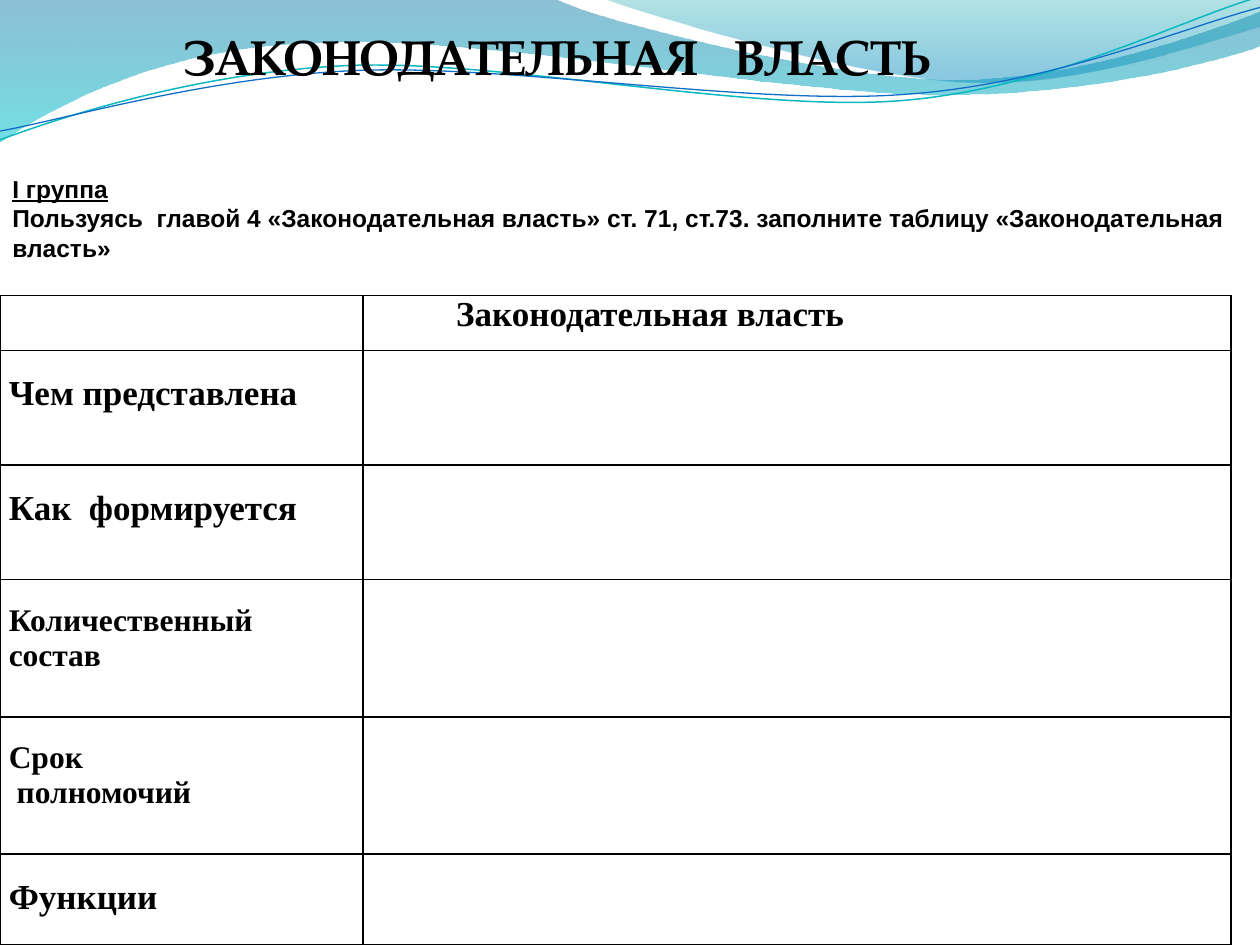
from math import cos, radians, sin

from lxml import etree
from pptx import Presentation
from pptx.dml.color import RGBColor
from pptx.enum.shapes import MSO_SHAPE
from pptx.enum.text import MSO_ANCHOR, PP_ALIGN
from pptx.oxml.ns import qn
from pptx.util import Inches, Pt

RECTANGLE = MSO_SHAPE.RECTANGLE
TOP = MSO_ANCHOR.TOP
LEFT = PP_ALIGN.LEFT
BLACK = RGBColor(0x00, 0x00, 0x00)
WHITE = RGBColor(0xFF, 0xFF, 0xFF)
DEEP_BLUE = RGBColor(0x00, 0x74, 0xA1)
AQUA = RGBColor(0x00, 0xC6, 0xCF)
TEAL = RGBColor(0x00, 0xA1, 0xA9)
SKY = RGBColor(0x00, 0x8B, 0xBF)
TEAL_LINE = RGBColor(0x0A, 0xB8, 0xBF)
BLUE_LINE = RGBColor(0x0F, 0x6F, 0xC6)
RIPPLE_TILT = 2.7

prs = Presentation()
prs.slide_width = Inches(10)
prs.slide_height = Inches(7.5)
slide = prs.slides.add_slide(prs.slide_layouts[6])


def add_wave(start, segments, close, tilt=0, pivot=(0, 0)):
    outline = [start]
    for segment in segments:
        outline.extend(zip(segment[::2], segment[1::2]))
    cosine, sine = cos(radians(tilt)), sin(radians(tilt))
    points = []
    for x, y in outline:
        dx, dy = x - pivot[0], y - pivot[1]
        points.append((Inches(pivot[0] + dx * cosine - dy * sine),
                       Inches(pivot[1] + dx * sine + dy * cosine)))
    builder = slide.shapes.build_freeform(*points[0])
    builder.add_line_segments(points[1:], close=close)
    wave = builder.convert_to_shape()
    wave.shadow.inherit = False
    wave.rotation = -tilt % 360
    steps = iter(list(wave._element.spPr.iter(qn("a:lnTo"))))
    for segment in segments:
        first = next(steps)
        if len(segment) == 6:
            curve = etree.Element(qn("a:cubicBezTo"))
            first.addprevious(curve)
            for step in (first, next(steps), next(steps)):
                curve.append(step[0])
                step.getparent().remove(step)
    return wave


def add_text(paragraph, text, font_values):
    paragraph.alignment = LEFT
    run = paragraph.add_run()
    run.text = text
    run.font.color.rgb = BLACK
    for attribute, value in font_values.items():
        setattr(run.font, attribute, value)


bands = [
    ((0, 0),
     [(4.4, -0.01), (4.76, 0.17, 6.64, 0.63, 7.58, 0.63),
      (8.53, 0.63, 9.58, 0.26, 10, 0.09), (10.01, 0.36),
      (9.83, 0.44, 8.7, 0.76, 7.46, 0.75), (6.22, 0.75, 3.82, 0.28, 2.57, 0.34),
      (1.29, 0.36, 0.46, 0.83, -0.01, 1.13), (0, 0)],
     [(0, DEEP_BLUE, 45), (1, AQUA, 55)]),
    ((4.79, -0.01),
     [(5.09, 0.11, 6.82, 0.62, 7.69, 0.65), (8.56, 0.69, 9.61, 0.32, 10, 0.21),
      (10, 0), (4.79, -0.01)],
     [(0, TEAL, 30), (0.8, SKY, 45)]),
]
for start, segments, stops in bands:
    band = add_wave(start, segments, True)
    band.line.fill.background()
    band.fill.gradient()
    band.fill.gradient_angle = 270
    for stop, (position, color, opacity) in zip(band.fill.gradient_stops, stops):
        stop.position = position
        stop.color.rgb = color
    for color_node, (_, _, opacity) in zip(band._element.spPr.iter(qn("a:srgbClr")), stops):
        etree.SubElement(color_node, qn("a:alpha"), val=str(opacity * 1000))

ripples = [
    ((0, 1.11),
     [(0.48, 0.93, 1.58, 0.57, 2.77, 0.52), (3.95, 0.47, 5.93, 0.89, 7.13, 0.8),
      (8.33, 0.71, 9.38, 0.15, 9.98, -0.02)], (4.99, 0.58), TEAL_LINE, 0.85),
    ((0, 1.04),
     [(0.47, 0.96, 1.64, 0.61, 2.83, 0.56), (4.03, 0.51, 5.97, 0.84, 7.17, 0.75),
      (8.36, 0.67, 9.41, 0.21, 10, 0.06)], (5, 0.59), BLUE_LINE, 0.75),
]
for start, segments, pivot, color, width in ripples:
    ripple = add_wave(start, segments, False, RIPPLE_TILT, pivot)
    ripple.fill.background()
    ripple.line.color.rgb = color
    ripple.line.width = Pt(width)

title = slide.shapes.add_textbox(0, Inches(0.16), Inches(8.75), Inches(0.57))
title.text_frame.word_wrap = True
title.text_frame.margin_left = Inches(1.46)
add_text(title.text_frame.paragraphs[0], "ЗАКОНОДАТЕЛЬНАЯ   ВЛАСТЬ",
         {"name": "TeX Gyre Pagella", "size": Pt(28), "bold": True})

column_widths = [2.88, 6.89]
row_heights = [0.44, 0.91, 0.91, 1.09, 1.09, 0.72]
entries = [
    (0, 1, ["Законодательная власть"], 20, 0.74, 0),
    (1, 0, ["Чем представлена"], 20, 0.07, 0.19),
    (2, 0, ["Как  формируется"], 20, 0.07, 0.19),
    (3, 0, ["Количественный", "состав"], 18, 0.07, 0.19),
    (4, 0, ["Срок", " полномочий"], 18, 0.07, 0.19),
    (5, 0, ["Функции"], 20, 0.07, 0.19),
]
table = slide.shapes.add_table(len(row_heights), len(column_widths), 0, Inches(2.34),
                               Inches(sum(column_widths)), Inches(sum(row_heights))).table
for column, width in zip(table.columns, column_widths):
    column.width = Inches(width)
for row, height in zip(table.rows, row_heights):
    row.height = Inches(height)

for cell in table.iter_cells():
    cell.fill.background()
    properties = cell._tc.get_or_add_tcPr()
    for index, side in enumerate(["a:lnL", "a:lnR", "a:lnT", "a:lnB"]):
        border = etree.Element(qn(side), w=str(Pt(1)))
        border_fill = etree.SubElement(border, qn("a:solidFill"))
        etree.SubElement(border_fill, qn("a:srgbClr"), val=str(BLACK))
        properties.insert(index, border)

for row, column, lines, size, left, top in entries:
    cell = table.cell(row, column)
    margins = {"margin_left": left, "margin_right": 0.07, "margin_top": top, "margin_bottom": 0}
    for attribute, value in margins.items():
        setattr(cell, attribute, Inches(value))
    for index, line in enumerate(lines):
        frame = cell.text_frame
        paragraph = frame.add_paragraph() if index else frame.paragraphs[0]
        add_text(paragraph, line, {"name": "Times New Roman", "size": Pt(size), "bold": True})

task = slide.shapes.add_shape(RECTANGLE, 0, Inches(1.33), Inches(10), Inches(1.01))
task.shadow.inherit = False
task.fill.solid()
task.fill.fore_color.rgb = WHITE
task.line.fill.background()
task_frame = task.text_frame
task_frame.word_wrap = True
task_frame.vertical_anchor = TOP
task_frame.margin_top = Inches(0.05)
task_font = {"name": "Arial", "size": Pt(14), "bold": True}
add_text(task_frame.paragraphs[0], "I группа", {**task_font, "underline": True})
add_text(task_frame.add_paragraph(),
         "Пользуясь  главой 4 «Законодательная власть» ст. 71, ст.73. "
         "заполните таблицу «Законодательная власть»", task_font)

prs.save("out.pptx")
